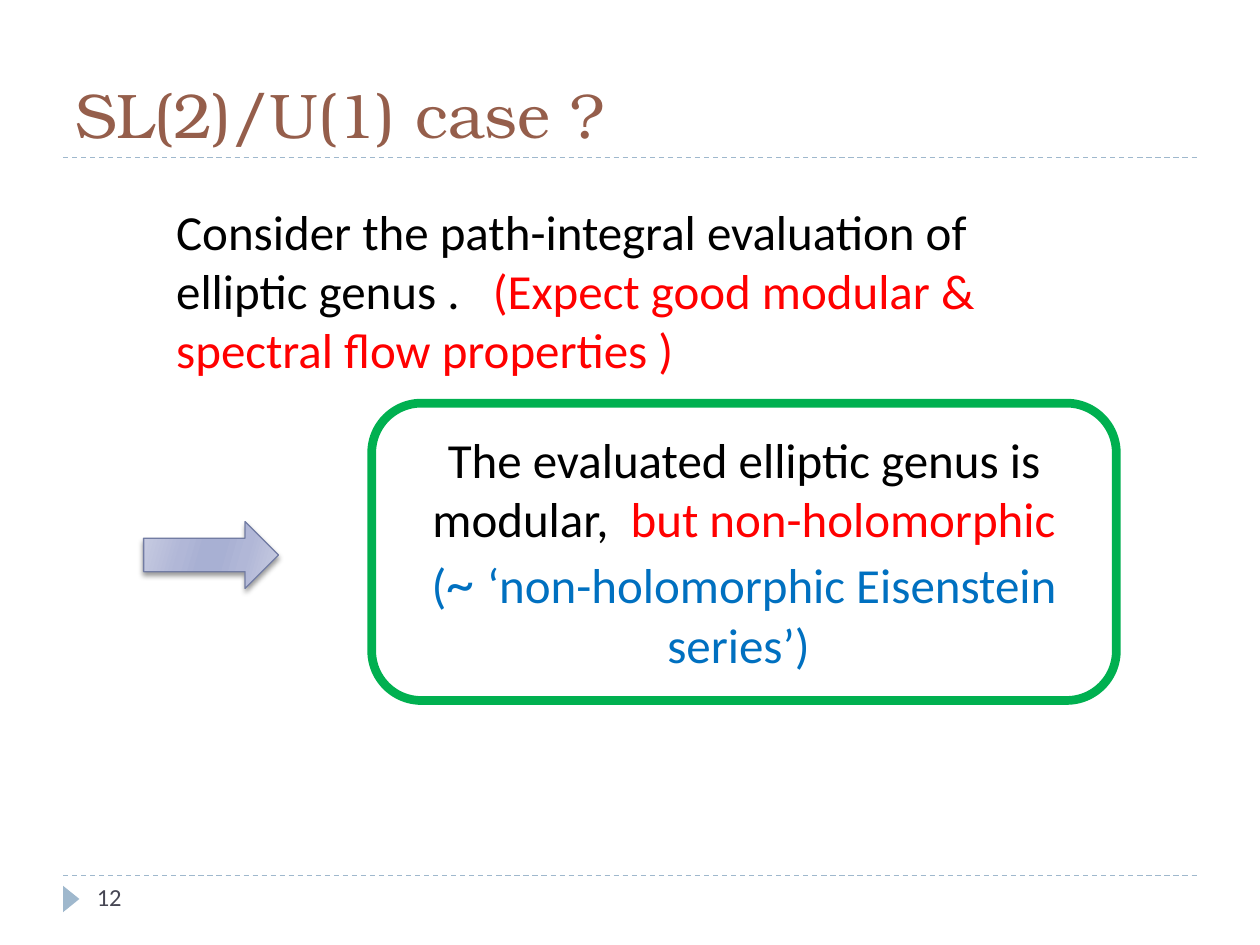
from lxml import etree
from pptx import Presentation
from pptx.dml.color import RGBColor
from pptx.enum import dml, shapes, text
from pptx.oxml import parse_xml
from pptx.oxml.ns import nsdecls, qn
from pptx.util import Pt

THEME = {
    "heading_font": "TeX Gyre Bonum", "body_font": "Calibri",
    "title_size": 36, "body_size": 28, "tilde_size": 32, "number_size": 14,
    "title": "955E4B", "body": "000000", "number": "464653",
    "accent": "FF0000", "note": "0070C0", "frame": "00B050",
    "paper": "FFFFFF", "rule": "9FB8CD", "arrow_line": "727CA3",
}
ARROW_STOPS = [(0, "C9CDE2"), (30, "B1B7D7"), (45, "A8B0D3"),
               (55, "A8B0D3"), (73, "B1B7D7"), (100, "C9CDE2")]

# Content: paragraphs of (text, format) runs
RED = {"color": THEME["accent"]}
BLUE = {"color": THEME["note"]}
TITLE = [[("SL(2)/U(1) case ?", {})]]
NUMBER = [[("12", {})]]
PREMISE = [
    [("Consider the path-integral evaluation of", {})],
    [("elliptic genus .   ", {}), ("(Expect good modular &", RED)],
    [("spectral flow properties )", RED)],
]
RESULT = [
    [("The evaluated elliptic genus is modular,  ", {}),
     ("but non-holomorphic", RED)],
    [("(", BLUE), ("~ ", {**BLUE, "size": THEME["tilde_size"]}),
     ("‘non-holomorphic Eisenstein series’) ", BLUE)],
]

# Layout in points
WIDTH, HEIGHT, MARGIN = 720, 540, 36
RULE_TOPS = (90, 500.4)


def write(shape, paragraphs, font=THEME["body_font"], size=THEME["body_size"],
          color=THEME["body"], align=text.PP_ALIGN.LEFT,
          anchor=text.MSO_ANCHOR.TOP, wrap=True):
    frame = shape.text_frame
    frame.word_wrap = wrap
    frame.vertical_anchor = anchor
    for index, runs in enumerate(paragraphs):
        paragraph = frame.add_paragraph() if index else frame.paragraphs[0]
        paragraph.alignment = align
        for words, style in runs:
            run = paragraph.add_run()
            run.text = words
            run.font.name = font
            run.font.size = Pt(style.get("size", size))
            run.font.color.rgb = RGBColor.from_string(style.get("color", color))


def add_box(slide, left, top, width, height):
    return slide.shapes.add_textbox(Pt(left), Pt(top), Pt(width), Pt(height))


def add_shape(slide, kind, left, top, width, height, fill=None, line=None, weight=0.75):
    shape = slide.shapes.add_shape(kind, Pt(left), Pt(top), Pt(width), Pt(height))
    shape.shadow.inherit = False
    if fill:
        shape.fill.solid()
        shape.fill.fore_color.rgb = RGBColor.from_string(fill)
    if line:
        shape.line.color.rgb = RGBColor.from_string(line)
        shape.line.width = Pt(weight)
    else:
        shape.line.fill.background()
    return shape


def add_rule(slide, top):
    rule = slide.shapes.add_connector(
        shapes.MSO_CONNECTOR.STRAIGHT, Pt(MARGIN), Pt(top), Pt(WIDTH - MARGIN), Pt(top))
    rule.line.color.rgb = RGBColor.from_string(THEME["rule"])
    rule.line.width = Pt(0.75)
    rule.line.dash_style = dml.MSO_LINE.DASH
    etree.SubElement(rule._element.spPr, qn("a:effectLst"))


def shade_arrow(arrow):
    """Give the arrow its gradient and soft shadow below."""
    stops = "".join(f'<a:gs pos="{place * 1000}"><a:srgbClr val="{color}"/></a:gs>'
                    for place, color in ARROW_STOPS)
    properties = arrow._element.spPr
    properties.find(qn("a:prstGeom")).addnext(parse_xml(
        f'<a:gradFill {nsdecls("a")} rotWithShape="1"><a:gsLst>{stops}</a:gsLst>'
        f'<a:lin ang="{16 * 60000}" scaled="0"/></a:gradFill>'))
    properties.find(qn("a:effectLst")).append(parse_xml(
        f'<a:outerShdw {nsdecls("a")} blurRad="{Pt(3)}" dist="{Pt(2)}" '
        f'dir="{90 * 60000}" rotWithShape="0"><a:srgbClr val="000000">'
        '<a:alpha val="40000"/></a:srgbClr></a:outerShdw>'))


def main():
    presentation = Presentation()
    presentation.slide_width, presentation.slide_height = Pt(WIDTH), Pt(HEIGHT)
    slide = presentation.slides.add_slide(presentation.slide_layouts[6])
    kinds = shapes.MSO_SHAPE

    # Rules and page marker
    for top in RULE_TOPS:
        add_rule(slide, top)
    marker = add_shape(slide, kinds.ISOSCELES_TRIANGLE, 33.12, 509.04, 15.12, 9.36,
                       fill=THEME["rule"])
    marker.rotation = 90

    # Title and page number
    write(add_box(slide, MARGIN, 18, WIDTH - 2 * MARGIN, 72), TITLE,
          font=THEME["heading_font"], size=THEME["title_size"],
          color=THEME["title"], anchor=text.MSO_ANCHOR.BOTTOM)
    write(add_box(slide, 48.24, RULE_TOPS[1], 156.24, 28.8), NUMBER,
          size=THEME["number_size"], color=THEME["number"])

    # Premise, arrow and result
    write(add_box(slide, 93.6, 111.6, 476.64, 108.72), PREMISE, wrap=False)
    arrow = add_shape(slide, kinds.RIGHT_ARROW, 82.08, 298.08, 77.04, 38.16,
                      line=THEME["arrow_line"])
    shade_arrow(arrow)
    result = add_shape(slide, kinds.ROUNDED_RECTANGLE, 212.4, 230.4, 425.52, 169.92,
                       fill=THEME["paper"], line=THEME["frame"], weight=5)
    write(result, RESULT, align=text.PP_ALIGN.CENTER, anchor=text.MSO_ANCHOR.MIDDLE)

    presentation.save("out.pptx")


if __name__ == "__main__":
    main()
